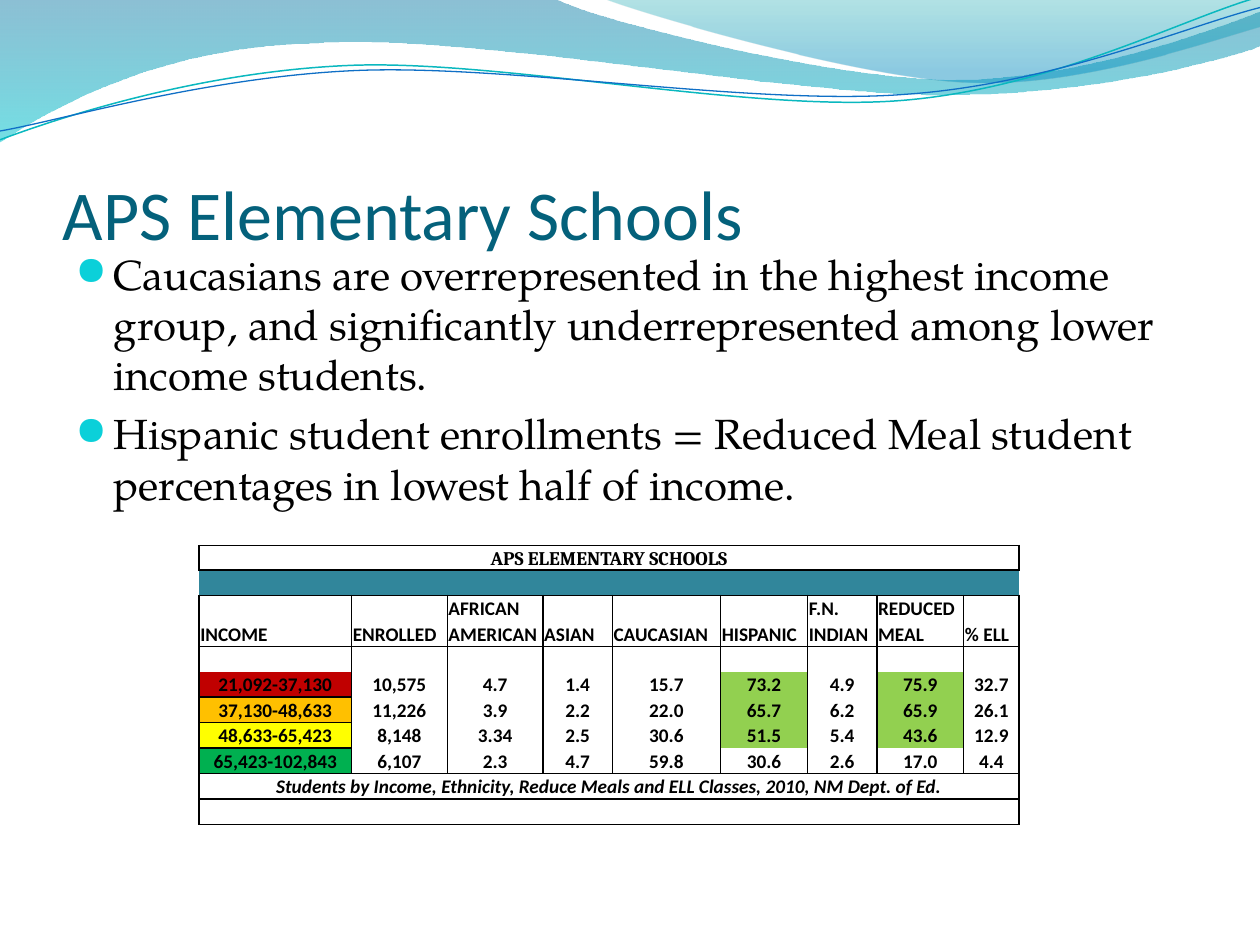
from lxml import etree
from pptx import Presentation
from pptx import util as u
from pptx.dml.color import RGBColor
from pptx.enum import text
from pptx.oxml import ns

BLACK = RGBColor(0, 0, 0)
WHITE = RGBColor(255, 255, 255)
TITLE = RGBColor(0x04, 0x61, 0x7B)
DOT = RGBColor(0x0B, 0xD0, 0xD9)
DEEP = RGBColor(0x00, 0x74, 0xA1)
AQUA = RGBColor(0x00, 0xC6, 0xCF)
TEAL = RGBColor(0x00, 0xA1, 0xA9)
SKY = RGBColor(0x00, 0x8B, 0xBF)
CYAN = RGBColor(0x0A, 0xB8, 0xBF)
BLUE = RGBColor(0x0F, 0x6F, 0xC6)
BAND = RGBColor(0x31, 0x86, 0x9B)
LIME = RGBColor(0x92, 0xD0, 0x50)
RED = RGBColor(0xC0, 0, 0)
GOLD = RGBColor(0xFF, 0xC0, 0)
YELLOW = RGBColor(0xFF, 0xFF, 0)
GREEN = RGBColor(0, 0xB0, 0x50)

PLAIN = "{2D5ABB26-0587-4C30-8999-92F81FD0307C}"
POINTS = [
    "Caucasians are overrepresented in the highest income group, and "
    "significantly underrepresented among lower income students.",
    "Hispanic student enrollments = Reduced Meal student percentages "
    "in lowest half of income.",
]
WIDTHS = [1.21, 0.76, 0.76, 0.55, 0.86, 0.69, 0.55, 0.69, 0.44]
FIRST = 0.19
CELLS = [
    ["APS ELEMENTARY SCHOOLS"] + [""] * 8,
    [""] * 9,
    ["", "", "AFRICAN", "", "", "", "F.N.", "REDUCED", ""],
    ["INCOME", "ENROLLED", "AMERICAN", "ASIAN", "CAUCASIAN", "HISPANIC",
     "INDIAN", "MEAL", "% ELL"],
    [""] * 9,
    ["21,092-37,130", "10,575", "4.7", "1.4", "15.7", "73.2", "4.9", "75.9", "32.7"],
    ["37,130-48,633", "11,226", "3.9", "2.2", "22.0", "65.7", "6.2", "65.9", "26.1"],
    ["48,633-65,423", "8,148", "3.34", "2.5", "30.6", "51.5", "5.4", "43.6", "12.9"],
    ["65,423-102,843", "6,107", "2.3", "4.7", "59.8", "30.6", "2.6", "17.0", "4.4"],
    ["Students by Income, Ethnicity, Reduce Meals and ELL Classes, 2010, "
     "NM Dept. of Ed."] + [""] * 8,
    [""] * 9,
]
MERGED = (0, 9, 10)
EDGES = ["LRTB", "TB", "LRT", "LRB", "LRT", "LR", "LR", "LR", "LRB", "LRTB", "LRTB"]
LEVELS = {5: RED, 6: GOLD, 7: YELLOW, 8: GREEN}


def add(node, tag, **attrs):
    return etree.SubElement(node, ns.qn(tag), **attrs)


def trace(slide, box, start, parts, close):
    left, top = box
    dots = [(u.Inches(left + x), u.Inches(top + y))
            for x, y in [start] + [dot for part in parts for dot in part]]
    form = slide.shapes.build_freeform(*dots[0], scale=1.0)
    form.add_line_segments(dots[1:], close=close)
    shape = form.convert_to_shape()
    shape.shadow.inherit = False
    lines = iter(list(shape.element.spPr.iter(ns.qn("a:lnTo"))))
    for part in parts:
        steps = [next(lines) for dot in part]
        if len(steps) == 3:
            bend = etree.Element(ns.qn("a:cubicBezTo"))
            steps[0].addprevious(bend)
            for step in steps:
                bend.append(step[0])
                step.getparent().remove(step)
    return shape


def wave(slide, box, start, parts, stops):
    shape = trace(slide, box, start, parts, True)
    shape.line.fill.background()
    shape.fill.gradient()
    shape.fill.gradient_angle = 270
    for stop, (pos, color, alpha) in zip(shape.fill.gradient_stops, stops):
        stop.position = pos
        stop.color.rgb = color
    marks = shape.element.spPr.iter(ns.qn("a:srgbClr"))
    for mark, (pos, color, alpha) in zip(marks, stops):
        add(mark, "a:alpha", val=str(alpha * 1000))


def strand(slide, box, start, parts, color, width):
    shape = trace(slide, box, start, parts, False)
    shape.fill.background()
    shape.line.color.rgb = color
    shape.line.width = u.Pt(width)


def header(slide, box):
    wave(slide, box, (0, 0), [
        [(4.4, -0.01)],
        [(4.76, 0.17), (6.64, 0.63), (7.58, 0.63)],
        [(8.53, 0.63), (9.58, 0.26), (10, 0.09)],
        [(10.01, 0.36)],
        [(9.83, 0.44), (8.7, 0.76), (7.46, 0.75)],
        [(6.22, 0.75), (3.82, 0.28), (2.57, 0.34)],
        [(1.29, 0.36), (0.46, 0.83), (-0.01, 1.13)],
    ], [(0, DEEP, 45), (1, AQUA, 55)])
    wave(slide, box, (4.79, -0.01), [
        [(5.09, 0.11), (6.82, 0.62), (7.69, 0.65)],
        [(8.56, 0.69), (9.61, 0.32), (10, 0.21)],
        [(10, 0)],
    ], [(0, TEAL, 30), (0.8, SKY, 45)])
    strand(slide, box, (0, 1.11), [
        [(0.48, 0.93), (1.58, 0.57), (2.77, 0.52)],
        [(3.95, 0.47), (5.93, 0.89), (7.13, 0.8)],
        [(8.33, 0.71), (9.38, 0.15), (9.98, -0.02)],
    ], CYAN, 0.85)
    strand(slide, box, (0, 1.04), [
        [(0.47, 0.96), (1.64, 0.61), (2.83, 0.56)],
        [(4.03, 0.51), (5.97, 0.84), (7.17, 0.75)],
        [(8.36, 0.67), (9.41, 0.21), (10, 0.06)],
    ], BLUE, 0.75)


def write(para, words, size, face, color, bold=False, italic=False):
    run = para.add_run()
    run.text = words
    font = run.font
    font.size, font.name, font.color.rgb = u.Pt(size), face, color
    font.bold, font.italic = bold, italic


def frame(slide, box):
    area = slide.shapes.add_textbox(*map(u.Inches, box)).text_frame
    area.word_wrap = True
    return area


def title(slide, box):
    area = frame(slide, box)
    area.vertical_anchor = text.MSO_ANCHOR.BOTTOM
    area.margin_left = area.margin_right = area.margin_bottom = 0
    write(area.paragraphs[0], "APS Elementary Schools", 40, "Calibri", TITLE)


def body(slide, box):
    area = frame(slide, box)
    for i, words in enumerate(POINTS):
        para = area.add_paragraph() if i else area.paragraphs[0]
        props = para._p.get_or_add_pPr()
        props.set("marL", str(u.Inches(0.3)))
        props.set("indent", str(u.Inches(-0.3)))
        add(add(props, "a:spcBef"), "a:spcPct", val="20000")
        add(add(props, "a:buClr"), "a:srgbClr", val=str(DOT))
        add(props, "a:buSzPct", val="95000")
        add(props, "a:buFont", typeface="OpenSymbol")
        add(props, "a:buChar", char="●")
        write(para, words, 24, "TeX Gyre Pagella", BLACK)


def border(cell, sides):
    props = cell._tc.get_or_add_tcPr()
    for side in "LRTB":
        line = add(props, "a:ln" + side, w=str(u.Pt(1)))
        if side in sides:
            add(add(line, "a:solidFill"), "a:srgbClr", val=str(BLACK))
        else:
            add(line, "a:noFill")


def shade(row, col):
    if row == 1:
        return BAND
    if col == 0 and row in LEVELS:
        return LEVELS[row]
    if col in (5, 7) and row in (5, 6, 7):
        return LIME
    return WHITE


def style(cell, row, col, words):
    cell.margin_left = cell.margin_right = cell.margin_top = u.Inches(0.01)
    cell.margin_bottom = 0
    cell.vertical_anchor = text.MSO_ANCHOR.BOTTOM
    border(cell, "LRTB" if col == 0 and row in (6, 7, 8) else
           "LRB" if col == 0 and row == 5 else EDGES[row])
    cell.fill.solid()
    cell.fill.fore_color.rgb = shade(row, col)
    para = cell.text_frame.paragraphs[0]
    if row not in (2, 3):
        para.alignment = text.PP_ALIGN.CENTER
    if words:
        face = "Calibri" if row else "Cambria"
        write(para, words, 11, face, BLACK, True, row == 9)
    else:
        para._p.get_or_add_endParaRPr().set("sz", "1100")


def grid(slide, box):
    item = slide.shapes.add_table(len(CELLS), len(WIDTHS), *map(u.Inches, box))
    table = item.table
    table.first_row = table.horz_banding = False
    table._tbl.tblPr.find(ns.qn("a:tableStyleId")).text = PLAIN
    for col, width in zip(table.columns, WIDTHS):
        col.width = u.Inches(width)
    rest = (box[3] - FIRST) / (len(CELLS) - 1)
    for r, line in enumerate(CELLS):
        table.rows[r].height = u.Inches(rest if r else FIRST)
        for c, words in enumerate(line):
            style(table.cell(r, c), r, c, words)
        if r in MERGED:
            table.cell(r, 0).merge(table.cell(r, len(WIDTHS) - 1))


def main():
    deck = Presentation()
    deck.slide_width, deck.slide_height = u.Inches(10), u.Inches(7.5)
    slide = deck.slides.add_slide(deck.slide_layouts[6])
    header(slide, (0, 0))
    title(slide, (0.5, 0.77, 9, 1.25))
    body(slide, (0.5, 1.92, 9, 4.58))
    grid(slide, (1.58, 4.33, 6.5, 2.21))
    deck.save("out.pptx")


if __name__ == "__main__":
    main()
